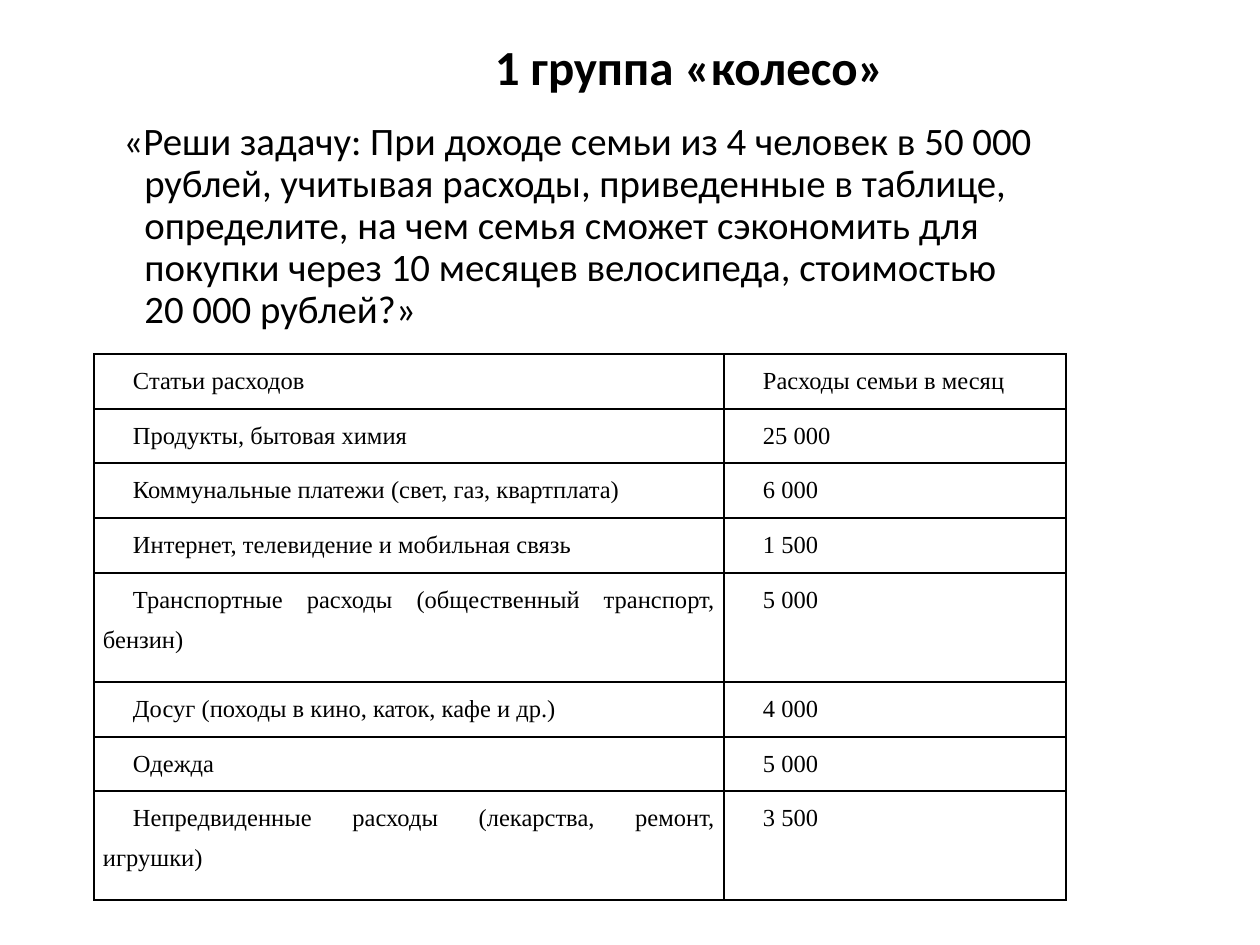
from lxml import etree
from pptx import Presentation
from pptx.dml.color import RGBColor
from pptx.enum.text import MSO_ANCHOR, PP_ALIGN
from pptx.oxml.ns import qn
from pptx.util import Pt

PX = 914400 // 126
CENTER, LEFT, JUSTIFY = PP_ALIGN.CENTER, PP_ALIGN.LEFT, PP_ALIGN.JUSTIFY
TOP = MSO_ANCHOR.TOP
COLORS = {"text": "000000", "border": "000000", "background": "FFFFFF"}
EXPENSES = [
    ("Статьи расходов", "Расходы семьи в месяц"),
    ("Продукты, бытовая химия", "25 000"),
    ("Коммунальные платежи (свет, газ, квартплата)", "6 000"),
    ("Интернет, телевидение и мобильная связь", "1 500"),
    ("Транспортные расходы (общественный транспорт, бензин)", "5 000"),
    ("Досуг (походы в кино, каток, кафе и др.)", "4 000"),
    ("Одежда", "5 000"),
    ("Непредвиденные расходы (лекарства, ремонт, игрушки)", "3 500"),
]
TASK = (
    "«Реши задачу: При доходе семьи из 4 человек в 50\u00a0000 рублей, "
    "учитывая расходы, приведенные в таблице, определите, на чем семья "
    "сможет сэкономить для покупки через 10 месяцев велосипеда, "
    "стоимостью 20\u00a0000 рублей?»"
)


class Deck:
    """Styles and draws the elements of the current slide."""

    def __init__(self, width, height):
        self.prs = Presentation()
        self.prs.slide_width, self.prs.slide_height = width * PX, height * PX
        self.s = self.prs.slides.add_slide(self.prs.slide_layouts[6])
        fill = self.s.background.fill
        fill.solid()
        fill.fore_color.rgb = RGBColor.from_string(COLORS["background"])

    def style(self, p, font, size, align, bold=False, spacing=1.0, margin=0, indent=0):
        p.font.name, p.font.size, p.font.bold = font, Pt(size), bold
        p.font.color.rgb = RGBColor.from_string(COLORS["text"])
        p.alignment, p.line_spacing = align, spacing
        pPr = p._p.get_or_add_pPr()
        pPr.set("marL", str(margin * PX))
        pPr.set("indent", str(indent * PX))

    def text(self, text, x, y, w, h, size, align, **style):
        sp = self.s.shapes.add_textbox(x * PX, y * PX, w * PX, h * PX)
        tf = sp.text_frame
        tf.word_wrap, tf.vertical_anchor = True, TOP
        p = tf.paragraphs[0]
        p.text = text
        self.style(p, "Calibri", size, align, **style)

    def border(self, cell):
        tcPr = cell._tc.get_or_add_tcPr()
        for i, side in enumerate(("a:lnL", "a:lnR", "a:lnT", "a:lnB")):
            ln = etree.Element(qn(side), w=str(Pt(1)))
            fill = etree.SubElement(ln, qn("a:solidFill"))
            etree.SubElement(fill, qn("a:srgbClr"), val=COLORS["border"])
            tcPr.insert(i, ln)

    def table(self, rows, x, y, widths, heights):
        frame = self.s.shapes.add_table(
            len(rows), len(widths), x * PX, y * PX, sum(widths) * PX, sum(heights) * PX
        )
        table = frame.table
        table.first_row = table.horz_banding = False
        for column, width in zip(table.columns, widths):
            column.width = width * PX
        for row, height, values in zip(table.rows, heights, rows):
            row.height = height * PX
            for cell, value in zip(row.cells, values):
                cell.fill.background()
                cell.margin_left = cell.margin_right = 9 * PX
                cell.margin_top = cell.margin_bottom = 0
                p = cell.text_frame.paragraphs[0]
                p.text = value
                self.style(p, "Times New Roman", 14, JUSTIFY, spacing=1.5, indent=30)
                self.border(cell)


def main():
    deck = Deck(1260, 945)
    deck.table(EXPENSES, 94, 354, [630, 342], [55, 54, 55, 55, 109, 55, 54, 109])
    deck.text("1 группа «колесо»", 382, 30, 615, 89, 28, CENTER, bold=True)
    deck.text(TASK, 84, 116, 1023, 238, 22.2, LEFT, spacing=0.9, margin=48, indent=-21)
    deck.prs.save("out.pptx")


if __name__ == "__main__":
    main()
